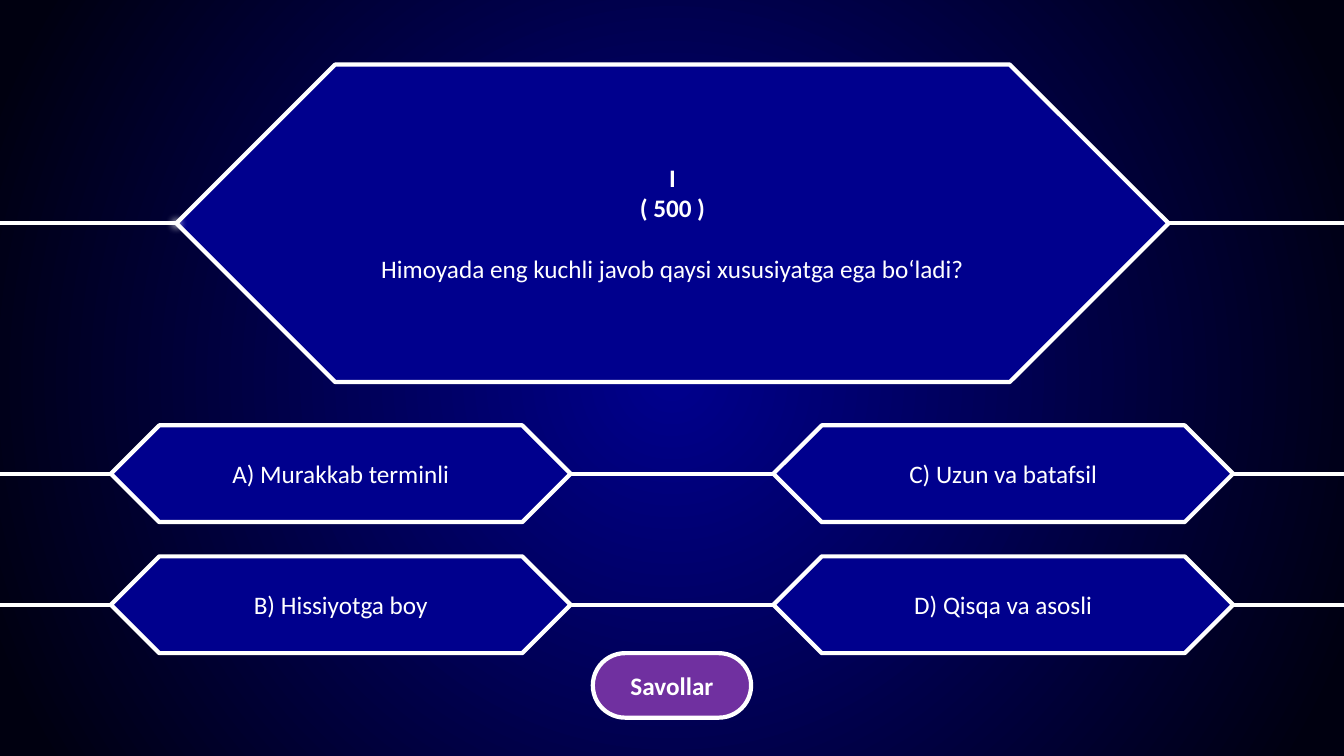
import pptx
import pptx.util
import pptx.dml.color
import pptx.enum.shapes
import pptx.enum.text
import pptx.oxml.ns
from lxml import etree

Inches, Pt = pptx.util.Inches, pptx.util.Pt
SHAPE = pptx.enum.shapes.MSO_SHAPE
qn = pptx.oxml.ns.qn

# Content: (text, bold, space before in points)
QUESTION = [
    ("I", True, 0),
    ("( 500 )", True, 0),
    ("Himoyada eng kuchli javob qaysi xususiyatga ega bo‘ladi?", False, 22),
]
ANSWERS = [  # rows, left to right
    ["A) Murakkab terminli", "C) Uzun va batafsil"],
    ["B) Hissiyotga boy", "D) Qisqa va asosli"],
]
BUTTON = "Savollar"

THEME = dict(panel="00008D", edge="000010", line="FFFFFF", text="FFFFFF",
             button="7030A0", font="Calibri", size=18, stroke=3)

# Layout in inches
WIDTH, HEIGHT = 13.33, 7.5
QUESTION_BOX = (1.75, 0.64, 9.84, 3.15)
ANSWER_X, ANSWER_Y = 1.1, 4.22
ANSWER_W, ANSWER_H = 4.56, 0.96
COLUMN_STEP, ROW_STEP = 6.57, 1.3
BUTTON_BOX = (5.88, 6.48, 1.57, 0.64)
GLOWS = [(0.3, 0.08), (0.1, 0.04)]  # diameter, soft edge


def rgb(name):
    return pptx.dml.color.RGBColor.from_string(THEME[name])


def add_text(tf, text, first=True, bold=False, before=0):
    p = tf.paragraphs[0] if first else tf.add_paragraph()
    p.alignment = pptx.enum.text.PP_ALIGN.CENTER
    if before:
        p.space_before = Pt(before)
    r = p.add_run()
    r.text = text
    r.font.name, r.font.size = THEME["font"], Pt(THEME["size"])
    r.font.bold, r.font.color.rgb = bold, rgb("text")


def add_panel(s, kind, box, paragraphs, fill="panel"):
    sp = s.shapes.add_shape(kind, *map(Inches, box))
    for i in range(len(sp.adjustments)):
        sp.adjustments[i] = 0.5
    sp.shadow.inherit = False
    sp.fill.solid()
    sp.fill.fore_color.rgb = rgb(fill)
    sp.line.color.rgb, sp.line.width = rgb("line"), Pt(THEME["stroke"])
    tf = sp.text_frame
    tf.word_wrap = True
    tf.vertical_anchor = pptx.enum.text.MSO_ANCHOR.MIDDLE
    for i, (text, bold, before) in enumerate(paragraphs):
        add_text(tf, text, first=i == 0, bold=bold, before=before)


def add_rail(s, y):
    cx = s.shapes.add_connector(pptx.enum.shapes.MSO_CONNECTOR.STRAIGHT,
                                Inches(WIDTH), Inches(y), 0, Inches(y))
    cx.line.color.rgb, cx.line.width = rgb("line"), Pt(THEME["stroke"])
    etree.SubElement(cx._element.spPr, qn("a:effectLst"))


def add_glow(s, x, y, size, soft):
    sp = s.shapes.add_shape(SHAPE.OVAL, Inches(x - size / 2), Inches(y - size / 2),
                            Inches(size), Inches(size))
    sp.fill.solid()
    sp.fill.fore_color.rgb = rgb("line")
    sp.line.fill.background()
    sp.shadow.inherit = False
    effects = sp._element.spPr.find(qn("a:effectLst"))
    etree.SubElement(effects, qn("a:softEdge"), rad=str(Inches(soft)))


def set_background(s):
    fill = s.background.fill
    fill.gradient()
    for stop, color, pos in zip(fill.gradient_stops, ("panel", "edge"), (0, 0.95)):
        stop.color.rgb, stop.position = rgb(color), pos
    grad = s._element.find(".//" + qn("a:gradFill"))
    lin = grad.find(qn("a:lin"))
    circle = etree.Element(qn("a:path"), path="circle")
    etree.SubElement(circle, qn("a:fillToRect"),
                     **{side: "50000" for side in "ltrb"})
    grad.replace(lin, circle)


def main():
    prs = pptx.Presentation()
    prs.slide_width, prs.slide_height = Inches(WIDTH), Inches(HEIGHT)
    s = prs.slides.add_slide(prs.slide_layouts[6])
    set_background(s)

    # Answers on their rails
    for row, answers in enumerate(ANSWERS):
        y = ANSWER_Y + row * ROW_STEP
        add_rail(s, y + ANSWER_H / 2)
        for col, answer in enumerate(answers):
            box = (ANSWER_X + col * COLUMN_STEP, y, ANSWER_W, ANSWER_H)
            add_panel(s, SHAPE.SNIP_2_DIAG_RECTANGLE, box, [(answer, False, 0)])

    # Question with a glow at its left tip
    left, top, _, height = QUESTION_BOX
    middle = top + height / 2
    add_rail(s, middle)
    add_panel(s, SHAPE.SNIP_2_DIAG_RECTANGLE, QUESTION_BOX, QUESTION)
    for size, soft in GLOWS:
        add_glow(s, left, middle, size, soft)

    # Button
    add_panel(s, SHAPE.ROUNDED_RECTANGLE, BUTTON_BOX, [(BUTTON, True, 0)], fill="button")
    prs.save("out.pptx")


if __name__ == "__main__":
    main()
